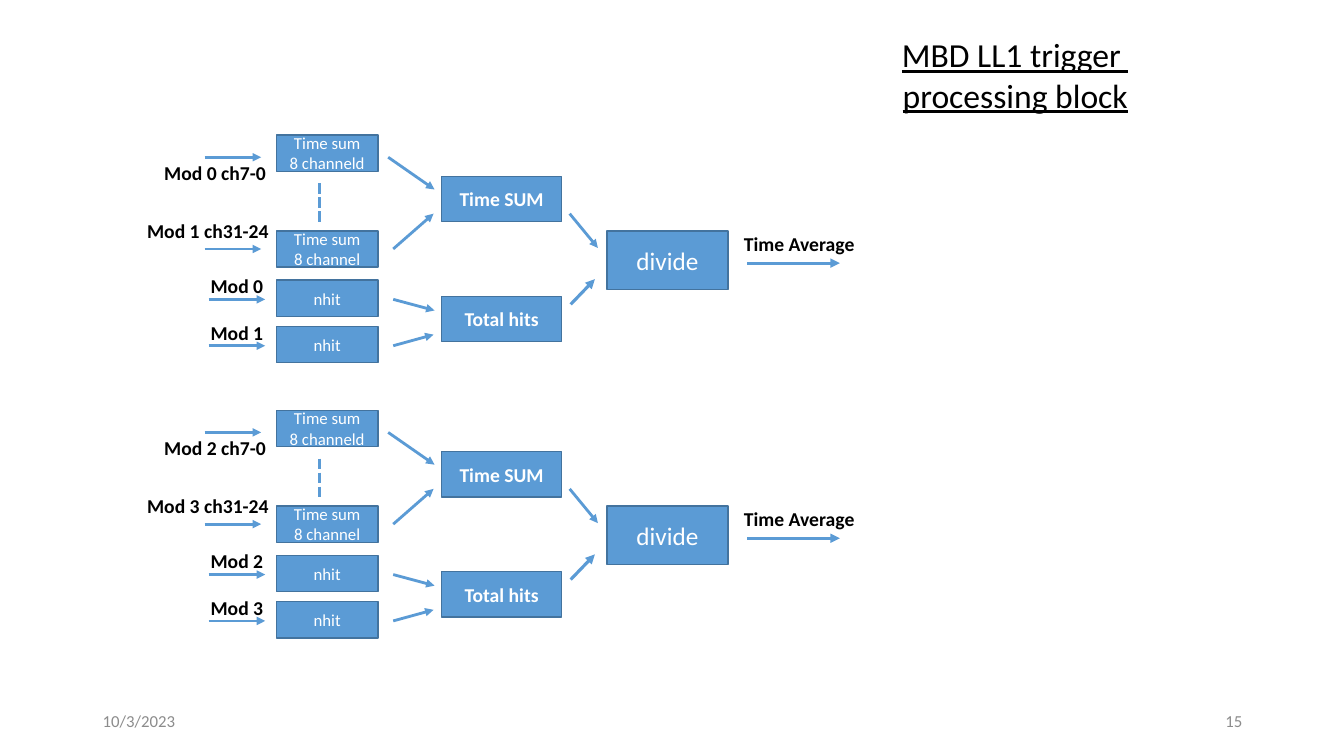
from pptx import Presentation
from pptx.dml.color import RGBColor
from pptx.enum.dml import MSO_LINE
from pptx.enum.shapes import MSO_CONNECTOR, MSO_SHAPE
from pptx.enum.text import MSO_ANCHOR, MSO_AUTO_SIZE, PP_ALIGN
from pptx.oxml.ns import qn
from pptx.util import Pt
from lxml import etree

PX = 9144  # EMU per px, 100 px to the inch
FONT = "Calibri"
COLORS = {"blue": "5B9BD5", "edge": "43739E", "white": "FFFFFF",
          "black": "000000", "gray": "8C8C8C"}
LEFT, CENTER, RIGHT = PP_ALIGN.LEFT, PP_ALIGN.CENTER, PP_ALIGN.RIGHT
TOP, MIDDLE = MSO_ANCHOR.TOP, MSO_ANCHOR.MIDDLE
NO_FIT, GROW = MSO_AUTO_SIZE.NONE, MSO_AUTO_SIZE.SHAPE_TO_FIT_TEXT
RECT, STRAIGHT = MSO_SHAPE.RECTANGLE, MSO_CONNECTOR.STRAIGHT
SYS_DASH = MSO_LINE.SQUARE_DOT

BLOCK_STEP = 273  # vertical distance between the two trigger blocks


def px(*values):
    return [v * PX for v in values]


def rgb(name):
    return RGBColor.from_string(COLORS[name])


def write(tf, lines, size, color, align=LEFT, bold=False, underline=False):
    for i, line in enumerate(lines):
        p = tf.paragraphs[0] if i == 0 else tf.add_paragraph()
        p.alignment = align
        r = p.add_run()
        r.text = line
        r.font.name = FONT
        r.font.size = Pt(size)
        r.font.bold = bold
        r.font.underline = underline
        r.font.color.rgb = rgb(color)


def add_box(s, x, y, w, h, lines, size, bold=False):
    sp = s.shapes.add_shape(RECT, *px(x, y, w, h))
    sp.shadow.inherit = False
    sp.fill.solid()
    sp.fill.fore_color.rgb = rgb("blue")
    sp.line.color.rgb = rgb("edge")
    sp.line.width = Pt(1)
    sp.text_frame.vertical_anchor = MIDDLE
    write(sp.text_frame, lines, size, "white", CENTER, bold)


def add_label(s, x, y, w, text):
    tf = s.shapes.add_textbox(*px(x, y, w, 34)).text_frame
    tf.word_wrap = False
    tf.auto_size = GROW
    write(tf, [text], 14, "black", bold=True)


def add_line(s, x1, y1, x2, y2, width=2, dash=None):
    """Dashed lines are plain; solid ones end in an arrowhead."""
    c = s.shapes.add_connector(STRAIGHT, *px(x1, y1, x2, y2))
    c.line.color.rgb = rgb("blue")
    c.line.width = Pt(width)
    sp_pr = c._element.spPr
    if dash:
        c.line.dash_style = dash
    else:
        ln = sp_pr.find(qn("a:ln"))
        etree.SubElement(ln, qn("a:tailEnd")).set("type", "triangle")
    etree.SubElement(sp_pr, qn("a:effectLst"))


def add_footer(s, x, text, align):
    tf = s.shapes.add_textbox(*px(x, 695, 300, 40)).text_frame
    tf.word_wrap = True
    tf.vertical_anchor = MIDDLE
    write(tf, [text], 12, "gray", align)


def add_title(s):
    title = s.shapes.title
    title.left, title.top, title.width, title.height = px(878, 29, 258, 91)
    tf = title.text_frame
    tf.word_wrap = True
    tf.auto_size = NO_FIT
    tf.vertical_anchor = TOP
    write(tf, ["MBD LL1 trigger ", "processing block"], 24, "black", CENTER,
          underline=True)


def add_trigger_block(s, dy, first_mod):
    second_mod = first_mod + 1

    # Channel time sums
    for y, last_line in ((134, "8 channeld"), (229, "8 channel")):
        add_box(s, 274, y + dy, 101, 36, ["Time sum", last_line], 12)
    add_line(s, 317, 182 + dy, 317, 220 + dy, 2.5, SYS_DASH)

    # Hit counters
    for y, mod in ((278, first_mod), (324, second_mod)):
        add_box(s, 274, y + dy, 101, 36, ["nhit"], 12)
        add_label(s, 199, y - 11 + dy, 73, f"Mod {mod}")

    # Channel labels
    add_label(s, 153, 155 + dy, 121, f"Mod {first_mod} ch7-0")
    add_label(s, 136, 212 + dy, 142, f"Mod {second_mod} ch31-24")

    # Totals, division and result
    add_box(s, 438, 175 + dy, 119, 45, ["Time SUM"], 14, bold=True)
    add_box(s, 438, 294 + dy, 119, 45, ["Total hits"], 14, bold=True)
    add_box(s, 602, 229 + dy, 120, 58, ["divide"], 18)
    add_label(s, 728, 225 + dy, 130, "Time Average")

    # Input arrows
    for x, y in ((203, 156), (203, 247), (207, 297), (207, 343)):
        add_line(s, x, y + dy, x + 56, y + dy)

    # Arrows between stages
    for x1, y1, x2, y2, width in (
            (385, 156, 431, 188, 2), (390, 247, 430, 212, 2),
            (390, 297, 431, 308, 2), (390, 343, 430, 332, 2),
            (565, 212, 593, 246, 2), (566, 302, 590, 277, 2.25),
            (741, 261, 833, 261, 2.25)):
        add_line(s, x1, y1 + dy, x2, y2 + dy, width)


def main():
    prs = Presentation()
    prs.slide_width, prs.slide_height = px(1333, 750)
    s = prs.slides.add_slide(prs.slide_layouts[5])
    add_title(s)
    for block in range(2):
        add_trigger_block(s, block * BLOCK_STEP, block * 2)
    add_footer(s, 92, "10/3/2023", LEFT)
    add_footer(s, 942, "15", RIGHT)
    prs.save("out.pptx")


if __name__ == "__main__":
    main()
